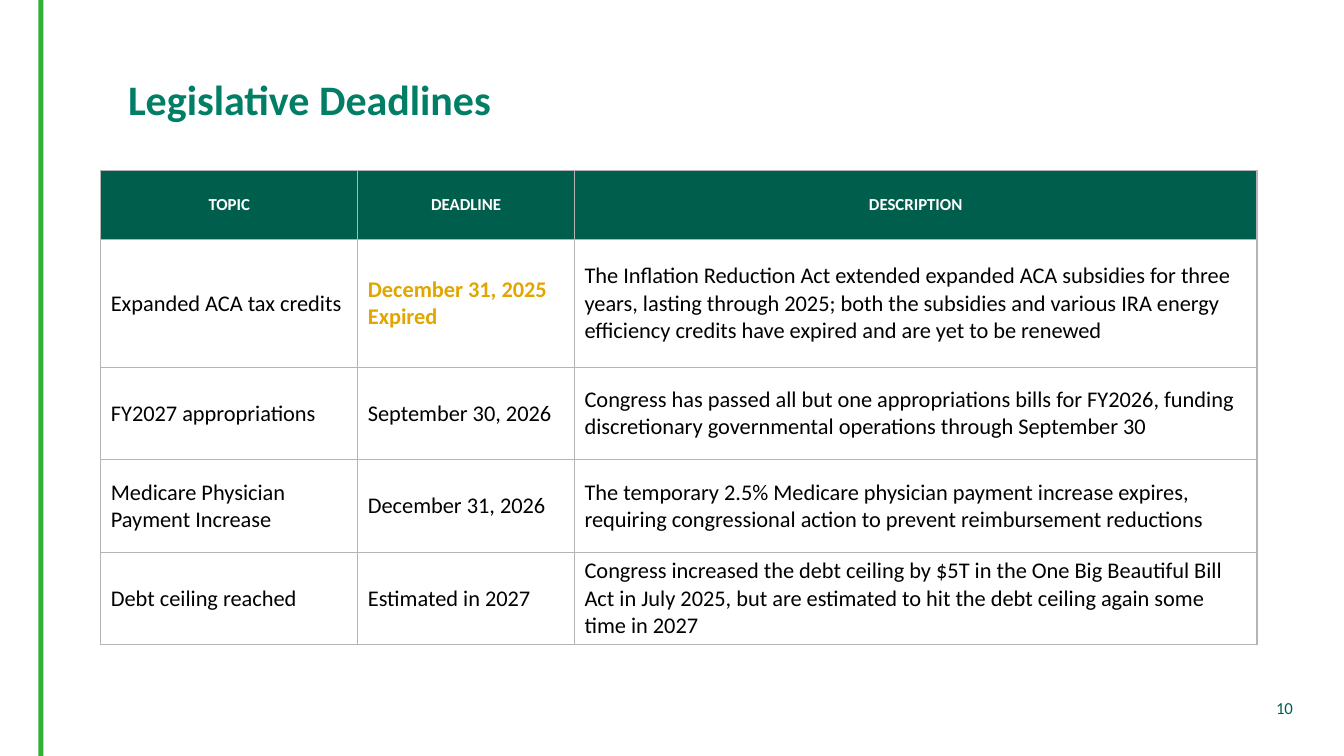
import dataclasses

import lxml.etree
import pptx
import pptx.dml.color
import pptx.enum.shapes
import pptx.enum.text
import pptx.oxml.ns
import pptx.util

ALIGN = pptx.enum.text.PP_ALIGN
MIDDLE = pptx.enum.text.MSO_ANCHOR.MIDDLE


@dataclasses.dataclass(frozen=True)
class Theme:
    """Fonts, colours, type sizes and grid of the deck."""
    font: str = "Calibri"
    accent: str = "2EB135"
    title: str = "017E66"
    dark: str = "005E4C"
    warning: str = "E2A600"
    text: str = "000000"
    light: str = "FFFFFF"
    border: str = "B4B4B4"
    title_size: int = 30
    body_size: int = 16
    small_size: int = 12
    border_width: int = 1
    columns: int = 40
    rows: int = 30


class Page:
    """One slide, drawn on a grid of columns and rows."""

    def __init__(self, deck, theme):
        """Add a title-only slide to the deck."""
        self.theme = theme
        self.slide = deck.slides.add_slide(deck.slide_layouts[5])
        self.column = deck.slide_width / theme.columns
        self.row = deck.slide_height / theme.rows

    def across(self, columns):
        """Turn grid columns into a length."""
        return pptx.util.Emu(round(columns * self.column))

    def down(self, rows):
        """Turn grid rows into a length."""
        return pptx.util.Emu(round(rows * self.row))

    def area(self, left, top, width, height):
        """Turn a grid area into lengths."""
        return self.across(left), self.down(top), self.across(width), self.down(height)

    def color(self, value):
        """Turn a hex value into a colour."""
        return pptx.dml.color.RGBColor.from_string(value)

    def set_text(self, frame, text, size, color, bold=False, align=ALIGN.LEFT):
        """Fill a text frame and format its runs."""
        frame.text = text
        frame.word_wrap = True
        for para in frame.paragraphs:
            para.alignment = align
            for span in para.runs:
                span.font.name = self.theme.font
                span.font.size = pptx.util.Pt(size)
                span.font.bold = bold
                span.font.color.rgb = self.color(color)

    def bar(self, *area):
        """Draw the accent bar."""
        shape = self.slide.shapes.add_shape(
            pptx.enum.shapes.MSO_SHAPE.RECTANGLE, *self.area(*area))
        shape.shadow.inherit = False
        shape.fill.solid()
        shape.fill.fore_color.rgb = self.color(self.theme.accent)
        shape.line.fill.background()

    def title(self, text, *area):
        """Place and format the title placeholder."""
        box = self.slide.shapes.title
        box.left, box.top, box.width, box.height = self.area(*area)
        frame = box.text_frame
        self.set_text(frame, text, self.theme.title_size, self.theme.title, bold=True)
        frame.auto_size = pptx.enum.text.MSO_AUTO_SIZE.NONE
        frame.vertical_anchor = MIDDLE
        frame.paragraphs[0].line_spacing = 0.9

    def number(self, text, *area):
        """Place the page number."""
        box = self.slide.shapes.add_textbox(*self.area(*area))
        self.set_text(box.text_frame, text, self.theme.small_size, self.theme.dark,
                      align=ALIGN.CENTER)
        box.text_frame.vertical_anchor = MIDDLE

    def outline(self, cell):
        """Draw the four borders of a cell."""
        properties = cell._tc.get_or_add_tcPr()
        name = pptx.oxml.ns.qn
        width = str(pptx.util.Pt(self.theme.border_width))
        for side in ("a:lnL", "a:lnR", "a:lnT", "a:lnB"):
            line = lxml.etree.SubElement(properties, name(side), w=width)
            fill = lxml.etree.SubElement(line, name("a:solidFill"))
            lxml.etree.SubElement(fill, name("a:srgbClr"), val=self.theme.border)

    def table(self, left, top, widths, heights, records, expired):
        """Build the table, with a dark header and expired deadlines highlighted."""
        theme = self.theme
        area = self.area(left, top, sum(widths), sum(heights))
        table = self.slide.shapes.add_table(len(heights), len(widths), *area).table
        table.horz_banding = False
        for column, width in zip(table.columns, widths):
            column.width = self.across(width)
        for row, height in zip(table.rows, heights):
            row.height = self.down(height)
        for row_index, record in enumerate(records):
            for column_index, text in enumerate(record):
                cell = table.cell(row_index, column_index)
                cell.vertical_anchor = MIDDLE
                self.outline(cell)
                if row_index == 0:
                    cell.fill.solid()
                    cell.fill.fore_color.rgb = self.color(theme.dark)
                    self.set_text(cell.text_frame, text, theme.small_size, theme.light,
                                  bold=True, align=ALIGN.CENTER)
                else:
                    late = (row_index, column_index) in expired
                    cell.fill.background()
                    self.set_text(cell.text_frame, text, theme.body_size,
                                  theme.warning if late else theme.text, bold=late)


DEADLINES = [
    ("TOPIC", "DEADLINE", "DESCRIPTION"),
    ("Expanded ACA tax credits", "December 31, 2025\nExpired",
     "The Inflation Reduction Act extended expanded ACA subsidies for three years, "
     "lasting through 2025; both the subsidies and various IRA energy efficiency "
     "credits have expired and are yet to be renewed"),
    ("FY2027 appropriations", "September 30, 2026",
     "Congress has passed all but one appropriations bills for FY2026, funding "
     "discretionary governmental operations through September 30"),
    ("Medicare Physician Payment Increase", "December 31, 2026",
     "The temporary 2.5% Medicare physician payment increase expires, requiring "
     "congressional action to prevent reimbursement reductions"),
    ("Debt ceiling reached", "Estimated in 2027",
     "Congress increased the debt ceiling by $5T in the One Big Beautiful Bill Act "
     "in July 2025, but are estimated to hit the debt ceiling again some time in 2027"),
]


def main():
    """Build and save the deck."""
    deck = pptx.Presentation()
    deck.slide_width = pptx.util.Inches(13.33)
    deck.slide_height = pptx.util.Inches(7.5)
    theme = Theme()
    page = Page(deck, theme)
    page.bar(1.14, 0, 0.15, theme.rows)
    page.number("10", 36.46, 27.28, 3.54, 1.6)
    page.title("Legislative Deadlines", 3.51, 2.48, 34.42, 3.16)
    page.table(3, 6.76, [7.65, 6.45, 20.31], [2.74, 5.08] + [3.67] * 3,
               DEADLINES, expired={(1, 1)})
    deck.save("out.pptx")


if __name__ == "__main__":
    main()
